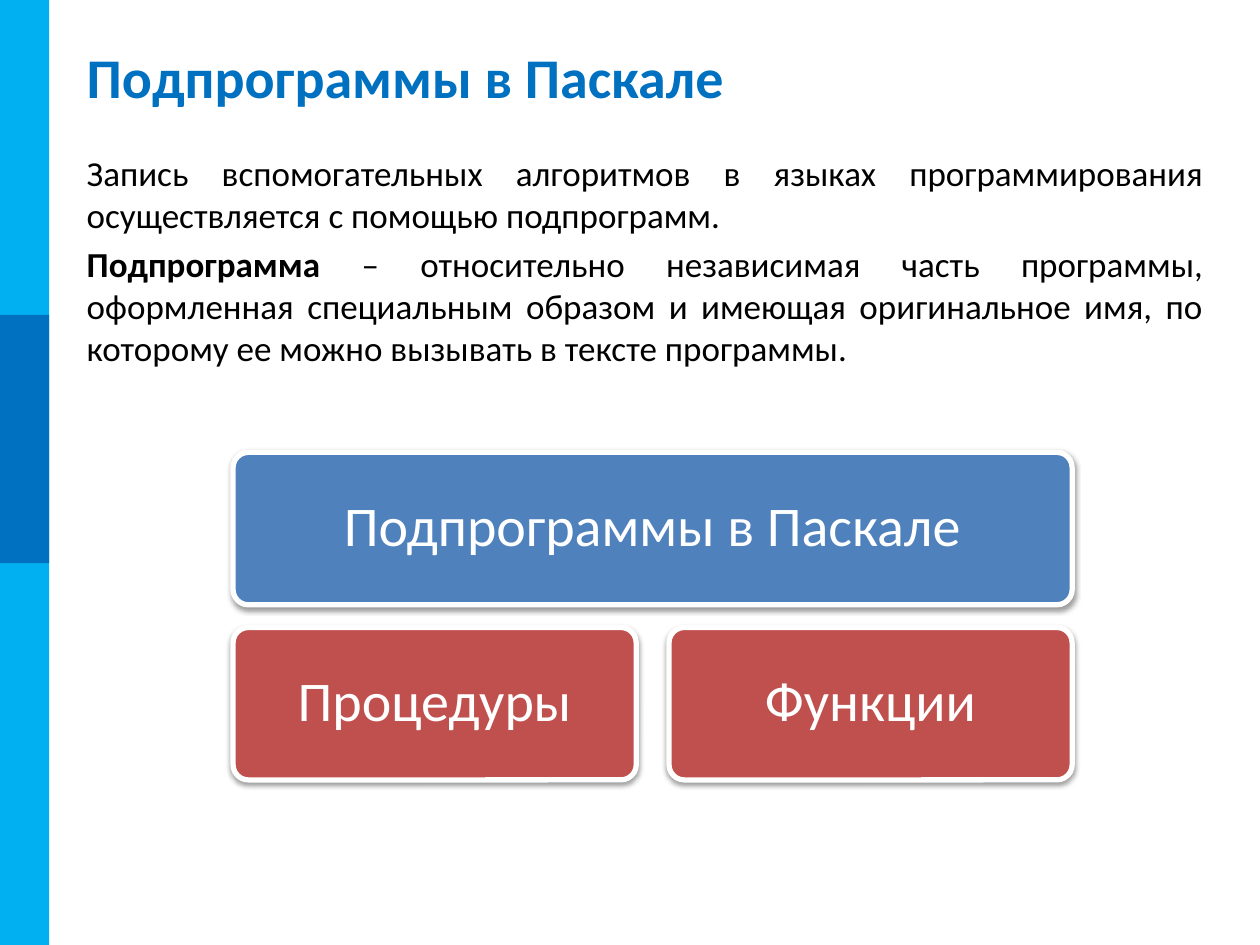
import pptx
import pptx.util
import pptx.dml.color
import pptx.enum.shapes
import pptx.enum.text
import pptx.oxml
import pptx.oxml.ns

Inches = pptx.util.Inches
Pt = pptx.util.Pt
Align = pptx.enum.text.PP_ALIGN
Anchor = pptx.enum.text.MSO_ANCHOR
Kind = pptx.enum.shapes.MSO_SHAPE

COLORS = {
    "sky": "00B0F0",
    "deep": "0070C0",
    "blue": "4F81BD",
    "red": "C0504D",
    "white": "FFFFFF",
    "black": "000000",
}

SHADOW = (
    f'<a:effectLst {pptx.oxml.ns.nsdecls("a")}>'
    '<a:outerShdw blurRad="40000" dist="20000" dir="5400000" rotWithShape="0">'
    '<a:srgbClr val="000000"><a:alpha val="38000"/></a:srgbClr>'
    '</a:outerShdw></a:effectLst>'
)


def color(name):
    return pptx.dml.color.RGBColor.from_string(COLORS[name])


def write(frame, paras, size=20, tint="black", align=Align.LEFT,
          anchor=Anchor.TOP, before=0, lines=1.0):
    frame.word_wrap = True
    frame.vertical_anchor = anchor
    for i, runs in enumerate(paras):
        para = frame.paragraphs[0] if i == 0 else frame.add_paragraph()
        para.alignment = align
        para.space_before = Pt(before)
        para.line_spacing = lines
        for words, bold in runs:
            run = para.add_run()
            run.text = words
            run.font.name = "Calibri"
            run.font.size = Pt(size)
            run.font.bold = bold
            run.font.color.rgb = color(tint)


def label(slide, box, paras, **style):
    area = slide.shapes.add_textbox(*map(Inches, box))
    write(area.text_frame, paras, **style)


def block(slide, kind, box, tint):
    shape = slide.shapes.add_shape(kind, *map(Inches, box))
    shape.shadow.inherit = False
    shape.fill.solid()
    shape.fill.fore_color.rgb = color(tint)
    shape.line.fill.background()
    return shape


def card(slide, box, tint, words):
    shape = block(slide, Kind.ROUNDED_RECTANGLE, box, tint)
    shape.adjustments[0] = 0.1
    shape.line.color.rgb = color("white")
    shape.line.width = Pt(3)
    props = shape.element.spPr
    props.remove(props.find(pptx.oxml.ns.qn("a:effectLst")))
    props.append(pptx.oxml.parse_xml(SHADOW))
    write(shape.text_frame, [[(words, False)]], size=32, tint="white",
          align=Align.CENTER, anchor=Anchor.MIDDLE, lines=0.9)


def main():
    deck = pptx.Presentation()
    deck.slide_width, deck.slide_height = Inches(10), Inches(7.5)
    slide = deck.slides.add_slide(deck.slide_layouts[6])

    block(slide, Kind.RECTANGLE, (0, 0, 0.39, 7.5), "sky")
    block(slide, Kind.RECTANGLE, (0, 2.5, 0.39, 1.97), "deep")

    title = "Подпрограммы в Паскале"
    label(slide, (0.59, 0.3, 9.06, 0.61), [[(title, True)]],
          size=32, tint="deep", anchor=Anchor.MIDDLE)
    label(slide, (0.59, 1.15, 9.06, 1.97), [
        [("Запись вспомогательных алгоритмов в языках программирования "
          "осуществляется с помощью подпрограмм.", False)],
        [("Подпрограмма", True),
         (" – относительно независимая часть программы, оформленная "
          "специальным образом и имеющая оригинальное имя, по которому "
          "ее можно вызывать в тексте программы.", False)],
    ], align=Align.JUSTIFY, before=4)

    left, top, wide, high = 1.85, 3.59, 6.66, 1.21
    half, step = 3.2, 1.39
    card(slide, (left, top, wide, high), "blue", title)
    for i, words in enumerate(("Процедуры", "Функции")):
        card(slide, (left + i * (wide - half), top + step, half, high),
             "red", words)

    deck.save("out.pptx")


if __name__ == "__main__":
    main()
